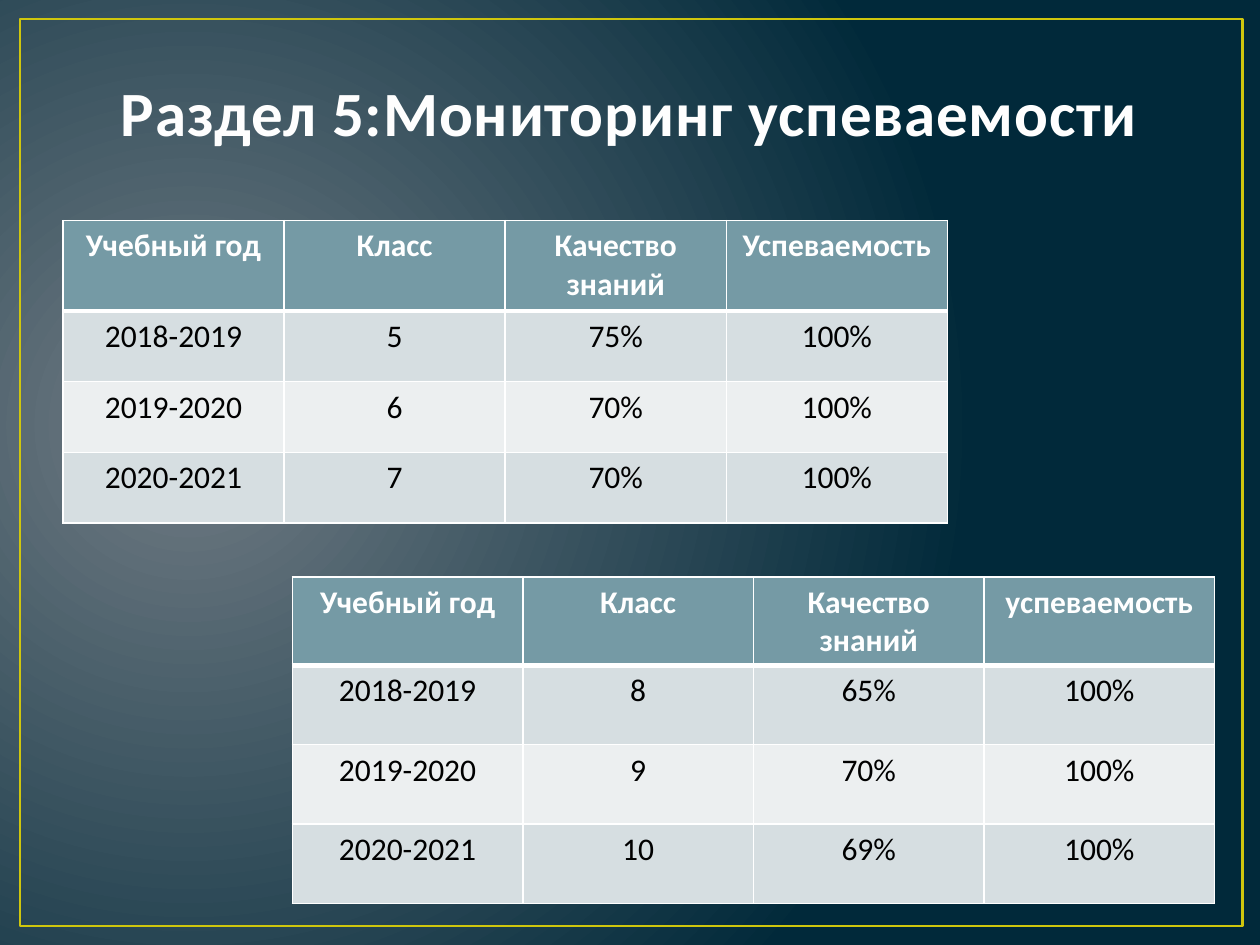
import pptx
import pptx.util
import pptx.dml.color
import pptx.enum.shapes
import pptx.enum.text
import pptx.oxml.ns
from lxml import etree

Inches = pptx.util.Inches
Pt = pptx.util.Pt
qn = pptx.oxml.ns.qn

COLORS = {
    "glow": "717C84", "night": "01293A", "frame": "CFC60D",
    "title": "FEFEFE", "white": "FFFFFF", "black": "000000",
    "header": "759AA5", "odd": "D6DEE1", "even": "ECEFF0",
}


def write_text(text_frame, text, color, **font_values):
    para = text_frame.paragraphs[0]
    para.alignment = pptx.enum.text.PP_ALIGN.CENTER
    span = para.add_run()
    span.text = text
    for name, value in {"name": "Calibri", **font_values}.items():
        setattr(span.font, name, value)
    span.font.color.rgb = pptx.dml.color.RGBColor.from_string(COLORS[color])
    return span


def add_borders(cell, widths):
    properties = cell._tc.get_or_add_tcPr()
    for index, (side, width) in enumerate(widths.items()):
        line = etree.Element(qn(f"a:ln{side}"), w=str(Pt(width)))
        fill = etree.SubElement(line, qn("a:solidFill"))
        etree.SubElement(fill, qn("a:srgbClr"), val=COLORS["white"])
        properties.insert(index, line)


deck = pptx.Presentation()
deck.slide_width = Inches(10)
deck.slide_height = Inches(7.5)
page = deck.slides.add_slide(deck.slide_layouts[6])

backdrop = page.background.fill
backdrop.gradient()
for stop, color in zip(backdrop.gradient_stops, ("glow", "night")):
    stop.color.rgb = pptx.dml.color.RGBColor.from_string(COLORS[color])
gradient = page._element.find(".//" + qn("a:gradFill"))
linear = gradient.find(qn("a:lin"))
circle = etree.Element(qn("a:path"), path="circle")
etree.SubElement(circle, qn("a:fillToRect"), l="15000", t="50000", r="85000", b="60000")
gradient.replace(linear, circle)

frame = page.shapes.add_shape(
    pptx.enum.shapes.MSO_SHAPE.RECTANGLE, Inches(0.16), Inches(0.15), Inches(9.7), Inches(7.2)
)
frame.shadow.inherit = False
frame.fill.background()
frame.line.color.rgb = pptx.dml.color.RGBColor.from_string(COLORS["frame"])
frame.line.width = Pt(1.5)

title = page.shapes.add_textbox(Inches(0.5), Inches(0.3), Inches(9), Inches(0.93))
title_format = {"word_wrap": True, "vertical_anchor": pptx.enum.text.MSO_ANCHOR.BOTTOM}
for name, value in title_format.items():
    setattr(title.text_frame, name, value)
heading = write_text(
    title.text_frame, "Раздел 5:Мониторинг успеваемости", "title", size=Pt(36), bold=True
)
heading.font._element.set("spc", "50")

tables = [
    {
        "place": (0.5, 1.75), "column": 1.755, "header": 0.72, "row": 0.56,
        "rows": [
            ("Учебный год", "Класс", "Качество знаний", "Успеваемость"),
            ("2018-2019", "5", "75%", "100%"),
            ("2019-2020", "6", "70%", "100%"),
            ("2020-2021", "7", "70%", "100%"),
        ],
    },
    {
        "place": (2.32, 4.58), "column": 1.83, "header": 0.7, "row": 0.63,
        "rows": [
            ("Учебный год", "Класс", "Качество знаний", "успеваемость"),
            ("2018-2019", "8", "65%", "100%"),
            ("2019-2020", "9", "70%", "100%"),
            ("2020-2021", "10", "69%", "100%"),
        ],
    },
]

for results in tables:
    rows = results["rows"]
    left, top = results["place"]
    width = results["column"] * len(rows[0])
    height = results["header"] + results["row"] * (len(rows) - 1)
    grid = page.shapes.add_table(
        len(rows), len(rows[0]), Inches(left), Inches(top), Inches(width), Inches(height)
    ).table
    for column in grid.columns:
        column.width = Inches(results["column"])
    for row_index, values in enumerate(rows):
        is_header = row_index == 0
        grid.rows[row_index].height = Inches(results["header" if is_header else "row"])
        fill_color = "header" if is_header else "odd" if row_index % 2 else "even"
        borders = {"L": 1, "R": 1, "T": 3 if row_index == 1 else 1, "B": 3 if is_header else 1}
        for column_index, value in enumerate(values):
            cell = grid.cell(row_index, column_index)
            cell.fill.solid()
            cell.fill.fore_color.rgb = pptx.dml.color.RGBColor.from_string(COLORS[fill_color])
            add_borders(cell, borders)
            write_text(
                cell.text_frame, value, "white" if is_header else "black",
                size=Pt(18), bold=is_header,
            )

deck.save("out.pptx")
